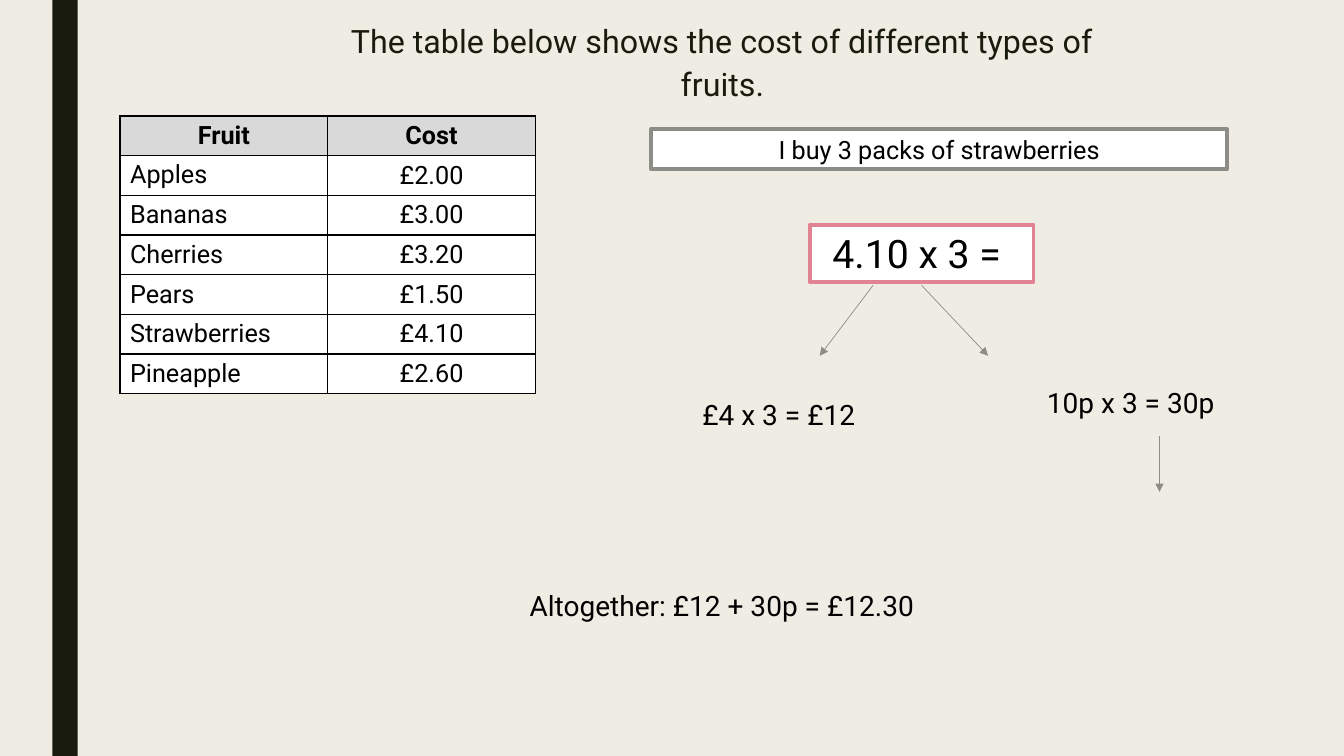
from lxml import etree
from pptx import Presentation
from pptx.dml.color import RGBColor
from pptx.enum.shapes import MSO_CONNECTOR, MSO_SHAPE
from pptx.enum.text import MSO_ANCHOR, MSO_AUTO_SIZE, PP_ALIGN
from pptx.oxml.ns import qn
from pptx.util import Inches, Pt

STRAIGHT = MSO_CONNECTOR.STRAIGHT
RECTANGLE = MSO_SHAPE.RECTANGLE
TOP, MIDDLE = MSO_ANCHOR.TOP, MSO_ANCHOR.MIDDLE
LEFT, CENTER = PP_ALIGN.LEFT, PP_ALIGN.CENTER
NO_AUTOFIT = MSO_AUTO_SIZE.NONE
TITLE_ONLY = 5

PRICES = [
    ("Fruit", "Cost"),
    ("Apples", "£2.00"),
    ("Bananas", "£3.00"),
    ("Cherries", "£3.20"),
    ("Pears", "£1.50"),
    ("Strawberries", "£4.10"),
    ("Pineapple", "£2.60"),
]


def color(value):
    return RGBColor.from_string(value)


def write(frame, text, size=18, ink="000000", bold=False, align=CENTER,
          anchor=TOP, spacing=None):
    """Put one formatted paragraph into a text frame."""
    frame.word_wrap = True
    frame.vertical_anchor = anchor
    para = frame.paragraphs[0]
    para.alignment = align
    if spacing:
        para.line_spacing = spacing
    span = para.add_run()
    span.text = text
    span.font.name = SlideBuilder.FONT
    span.font.size = Pt(size)
    span.font.bold = bold
    span.font.color.rgb = color(ink)


class SlideBuilder:
    FONT = "Roboto"
    BACKGROUND = "EFEDE3"
    DARK = "191B0E"
    GREY = "8C8D86"
    PINK = "E28394"
    WHITE = "FFFFFF"
    HEADER = "D9D9D9"

    def __init__(self, deck):
        self.page = deck.slides.add_slide(deck.slide_layouts[TITLE_ONLY])
        fill = self.page.background.fill
        fill.solid()
        fill.fore_color.rgb = color(self.BACKGROUND)

    def title(self, text, left, top, width, height):
        box = self.page.shapes.title
        box.left, box.top = Inches(left), Inches(top)
        box.width, box.height = Inches(width), Inches(height)
        box.text_frame.auto_size = NO_AUTOFIT
        write(box.text_frame, text, size=23, ink=self.DARK, anchor=MIDDLE,
              spacing=1.12)

    def rectangle(self, left, top, width, height, fill, line=None):
        box = self.page.shapes.add_shape(
            RECTANGLE, Inches(left), Inches(top), Inches(width), Inches(height))
        box.shadow.inherit = False
        box.fill.solid()
        box.fill.fore_color.rgb = color(fill)
        if line:
            box.line.color.rgb = color(line)
            box.line.width = Pt(2.75)
        else:
            box.line.fill.background()
        return box

    def framed_text(self, text, left, top, width, height, line, size):
        box = self.rectangle(left, top, width, height, self.WHITE, line)
        write(box.text_frame, text, size=size)

    def label(self, text, left, top, width):
        box = self.page.shapes.add_textbox(
            Inches(left), Inches(top), Inches(width), Inches(0.44))
        write(box.text_frame, text, size=20)

    def arrow(self, start, end):
        line = self.page.shapes.add_connector(
            STRAIGHT, *(Inches(value) for value in (*start, *end)))
        line.line.color.rgb = color(self.GREY)
        line.line.width = Pt(0.5)
        etree.SubElement(line.line._get_or_add_ln(), qn("a:tailEnd"),
                         type="triangle")
        etree.SubElement(line._element.spPr, qn("a:effectLst"))

    def table(self, rows, left, top, column_width, row_height):
        columns = len(rows[0])
        table = self.page.shapes.add_table(
            len(rows), columns, Inches(left), Inches(top),
            Inches(column_width * columns),
            Inches(row_height * len(rows))).table
        for column in table.columns:
            column.width = Inches(column_width)
        for row_index, values in enumerate(rows):
            for column_index, text in enumerate(values):
                header = row_index == 0
                name = column_index == 0 and not header
                cell = table.cell(row_index, column_index)
                write(cell.text_frame, text, bold=header,
                      align=LEFT if name else CENTER)
                cell.vertical_anchor = TOP if name else MIDDLE
                self.cell_borders(cell)
                cell.fill.solid()
                cell.fill.fore_color.rgb = color(
                    self.HEADER if header else self.WHITE)

    def cell_borders(self, cell):
        properties = cell._tc.get_or_add_tcPr()
        for side in ("a:lnL", "a:lnR", "a:lnT", "a:lnB"):
            border = etree.SubElement(properties, qn(side), w=str(Pt(1)))
            fill = etree.SubElement(border, qn("a:solidFill"))
            etree.SubElement(fill, qn("a:srgbClr"), val="000000")


def main():
    deck = Presentation()
    deck.slide_width, deck.slide_height = Inches(13.33), Inches(7.5)
    slide = SlideBuilder(deck)

    # Side band and title
    slide.rectangle(0.52, 0, 0.25, 7.5, slide.DARK)
    slide.title("The table below shows the cost of different types of fruits.",
                2.99, 0.29, 8.35, 0.61)

    # Price list
    slide.table(PRICES, 1.19, 1.15, column_width=2.06, row_height=0.39)

    # Question and calculation
    slide.framed_text("I buy 3 packs of strawberries", 6.46, 1.28, 5.71, 0.4,
                      slide.GREY, size=18)
    slide.framed_text("4.10 x 3 = ", 8.03, 2.23, 2.22, 0.57,
                      slide.PINK, size=28)

    # Split into pounds and pence
    slide.arrow((8.66, 2.83), (8.13, 3.53))
    slide.arrow((9.14, 2.83), (9.8, 3.53))
    slide.arrow((11.5, 4.33), (11.5, 4.88))
    slide.label("£4 x 3 = £12", 6.31, 3.89, 2.83)
    slide.label("10p x 3 = 30p", 9.8, 3.78, 2.83)

    # Total
    slide.label("Altogether: £12 + 30p = £12.30", 2.3, 5.79, 9.72)

    deck.save("out.pptx")


if __name__ == "__main__":
    main()
